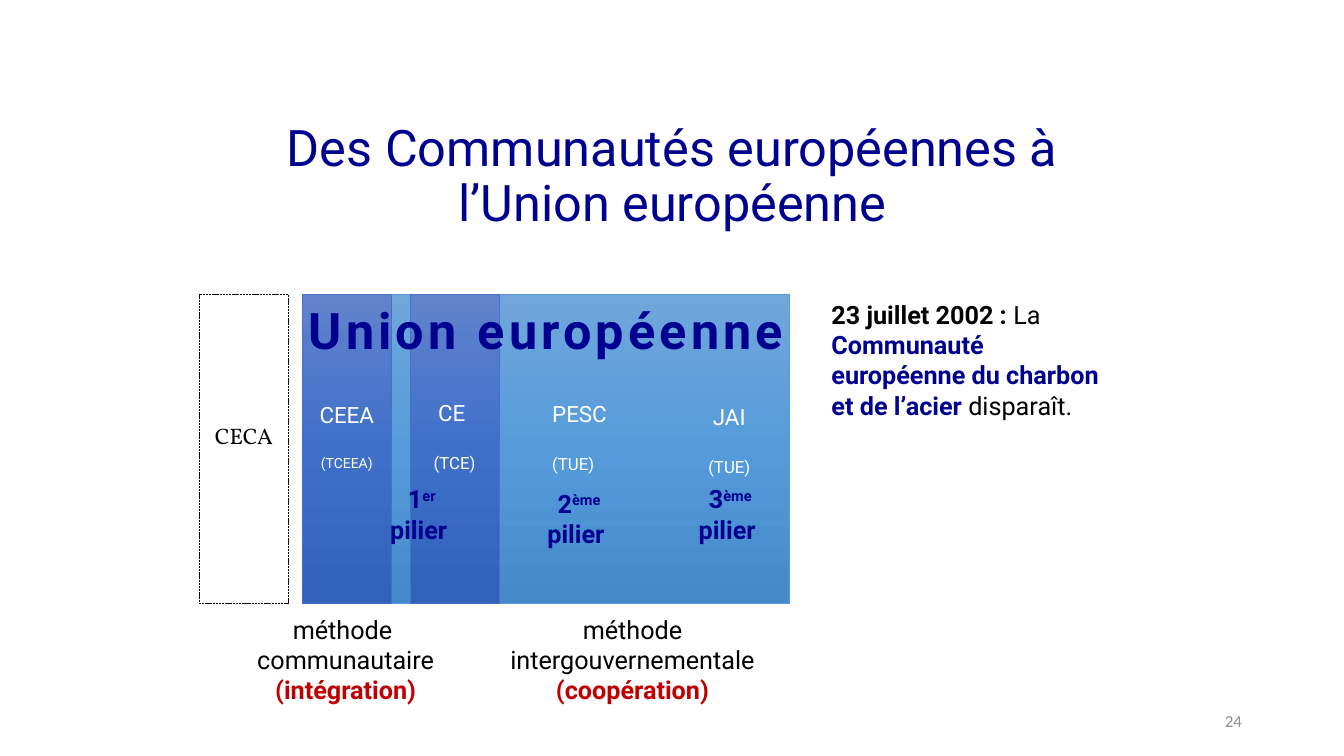
from copy import deepcopy

from lxml import etree
from pptx import Presentation
from pptx.dml.color import RGBColor
from pptx.enum.dml import MSO_LINE
from pptx.enum.shapes import MSO_SHAPE
from pptx.enum.text import MSO_ANCHOR, PP_ALIGN
from pptx.oxml.ns import qn
from pptx.util import Inches, Pt

LEFT, CENTER, RIGHT = PP_ALIGN.LEFT, PP_ALIGN.CENTER, PP_ALIGN.RIGHT
TOP, MIDDLE, BOTTOM = MSO_ANCHOR.TOP, MSO_ANCHOR.MIDDLE, MSO_ANCHOR.BOTTOM
RECTANGLE, DASH = MSO_SHAPE.RECTANGLE, MSO_LINE.SQUARE_DOT

NAVY = RGBColor(0x00, 0x00, 0x90)
BLACK = RGBColor(0x00, 0x00, 0x00)
WHITE = RGBColor(0xFF, 0xFF, 0xFF)
RED = RGBColor(0xC0, 0x00, 0x00)
GREY = RGBColor(0x8C, 0x8C, 0x8C)
SKY_LINE = RGBColor(0x5B, 0x9B, 0xD5)
ROYAL_LINE = RGBColor(0x44, 0x72, 0xC4)
SKY = (RGBColor(0x71, 0xA6, 0xDB), RGBColor(0x55, 0x9B, 0xDB), RGBColor(0x44, 0x8A, 0xCA))
ROYAL = (RGBColor(0x61, 0x83, 0xCB), RGBColor(0x3E, 0x70, 0xCA), RGBColor(0x30, 0x62, 0xBB))

COLUMNS, ROWS = 40, 30
BAND_TOP, BAND_ROWS, PILLAR_COLUMNS = 11.68, 12.28, 2.64
BOLD_NAVY = {"bold": True, "color": NAVY}
BOLD_RED = {"bold": True, "color": RED}


class PillarSlide:
    """Hold the style and the current slide, placed on a grid of columns and rows."""

    def __init__(self, deck):
        self.column = deck.slide_width / COLUMNS
        self.row = deck.slide_height / ROWS
        self.slide = deck.slides.add_slide(deck.slide_layouts[6])
        self.style = {"name": "Roboto", "size": Pt(18), "bold": False, "color": BLACK}

    def place(self, left, top, width, height):
        return (round(left * self.column), round(top * self.row),
                round(width * self.column), round(height * self.row))

    def fill_text(self, holder, paragraphs, anchor=TOP, align=CENTER, spacing=None, gap=0, **base):
        frame = holder.text_frame
        frame.word_wrap = True
        frame.vertical_anchor = anchor
        for index, runs in enumerate(paragraphs):
            paragraph = frame.add_paragraph() if index else frame.paragraphs[0]
            layout = {"alignment": align, "line_spacing": spacing,
                      "space_before": Pt(gap if index else 0)}
            for key, value in layout.items():
                setattr(paragraph, key, value)
            for words, changes in runs:
                run = paragraph.add_run()
                run.text = words
                self.style_font(run.font, {**self.style, **base, **changes})
        return frame

    def style_font(self, font, values):
        values = dict(values)
        font.color.rgb = values.pop("color")
        if values.pop("raised", False):
            font._element.set("baseline", "30000")
        for key, value in values.items():
            setattr(font, key, value)

    def text(self, area, paragraphs, **options):
        holder = self.slide.shapes.add_textbox(*self.place(*area))
        return self.fill_text(holder, paragraphs, **options)

    def block(self, left, width, line, colors=None):
        area = self.place(left, BAND_TOP, width, BAND_ROWS)
        block = self.slide.shapes.add_shape(RECTANGLE, *area)
        block.shadow.inherit = False
        block.line.color.rgb = line
        block.line.width = Pt(0.5)
        if colors:
            self.shade(block.fill, block._element, colors)
        else:
            block.fill.background()
            block.line.dash_style = DASH
        return block

    def shade(self, fill, element, colors):
        fill.gradient()
        fill.gradient_angle = 270
        stops = next(element.iter(qn("a:gsLst")))
        stops.insert(1, deepcopy(stops[0]))
        for stop, color, position in zip(fill.gradient_stops, colors, (0, 0.5, 1)):
            stop.color.rgb = color
            stop.position = position

    def pillar(self, left, paragraphs, line, colors=None, **options):
        block = self.block(left, PILLAR_COLUMNS, line, colors)
        frame = self.fill_text(block, paragraphs, MIDDLE, size=Pt(16), **options)
        frame.margin_bottom = Inches(0.31)

    def policy(self, area, name, treaty, align):
        self.text(area, [[(name, {})], [(treaty, {"size": Pt(12)})]],
                  align=align, gap=19, size=Pt(16), color=WHITE)

    def ordinal(self, left, top, width, number, suffix):
        runs = [(number, {}), (suffix, {"raised": True}), (" pilier ", {})]
        self.text((left, top, width, 2.84), [runs], **BOLD_NAVY)

    def banner(self, area, words):
        frame = self.text(area, [[(words, {})]], size=Pt(36), **BOLD_NAVY)
        properties = frame.paragraphs[0].runs[0].font._element
        properties.set("spc", "300")
        effects = etree.Element(qn("a:effectLst"))
        glow = etree.SubElement(effects, qn("a:outerShdw"),
                                blurRad="38100", dist="25400", dir="2700000")
        etree.SubElement(glow, qn("a:srgbClr"), val=str(SKY_LINE))
        properties.find(qn("a:solidFill")).addnext(effects)


def main():
    deck = Presentation()
    deck.slide_width, deck.slide_height = Inches(13.33), Inches(7.5)
    page = PillarSlide(deck)

    page.text((7.26, 2.96, 25.5, 6.44),
              [[("Des Communautés européennes à l’Union européenne", {})]],
              anchor=BOTTOM, spacing=0.9, size=Pt(36), color=NAVY)

    page.block(9, 14.49, SKY_LINE, SKY)
    for left, community, treaty, size in ((9, "CEEA", "(TCEEA)", 10),
                                          (12.21, "CE ", "(TCE)", 12)):
        page.pillar(left, [[(community, {})], [(treaty, {"size": Pt(size)})]],
                    ROYAL_LINE, ROYAL, gap=19, color=WHITE)
    page.pillar(5.94, [[("CECA", {})]], BLACK, name="Vollkorn")

    page.policy((16.14, 15.68, 2.46, 3.36), "PESC", "(TUE)", LEFT)
    page.policy((20.73, 15.8, 1.95, 3.36), "JAI", "(TUE)", CENTER)
    page.ordinal(10.92, 19, 3.27, "1", "er")
    page.ordinal(15.51, 19.16, 3.45, "2", "ème")
    page.ordinal(20.01, 19, 3.45, "3", "ème")
    page.banner((5.55, BAND_TOP, 21.42, 2.84), "Union européenne")

    page.text((24.45, BAND_TOP, 9.3, 7.68),
              [[("23 juillet 2002 : ", {"bold": True}), ("La ", {}),
                ("Communauté européenne du charbon et de l’acier ", BOLD_NAVY),
                ("disparaît.", {})]], align=LEFT)
    page.text((5.55, 24.16, 9.48, 4.04),
              [[("méthode ", {})], [("communautaire ", {}), ("(intégration)", BOLD_RED)]])
    page.text((14.19, 24.16, 9.27, 4.04),
              [[("méthode intergouvernementale ", {}), ("(coopération)", BOLD_RED)]])
    page.text((28.26, 27.8, 9, 1.6), [[("24", {})]], anchor=MIDDLE, align=RIGHT,
              name="Calibri", size=Pt(12), color=GREY)

    deck.save("out.pptx")


if __name__ == "__main__":
    main()
